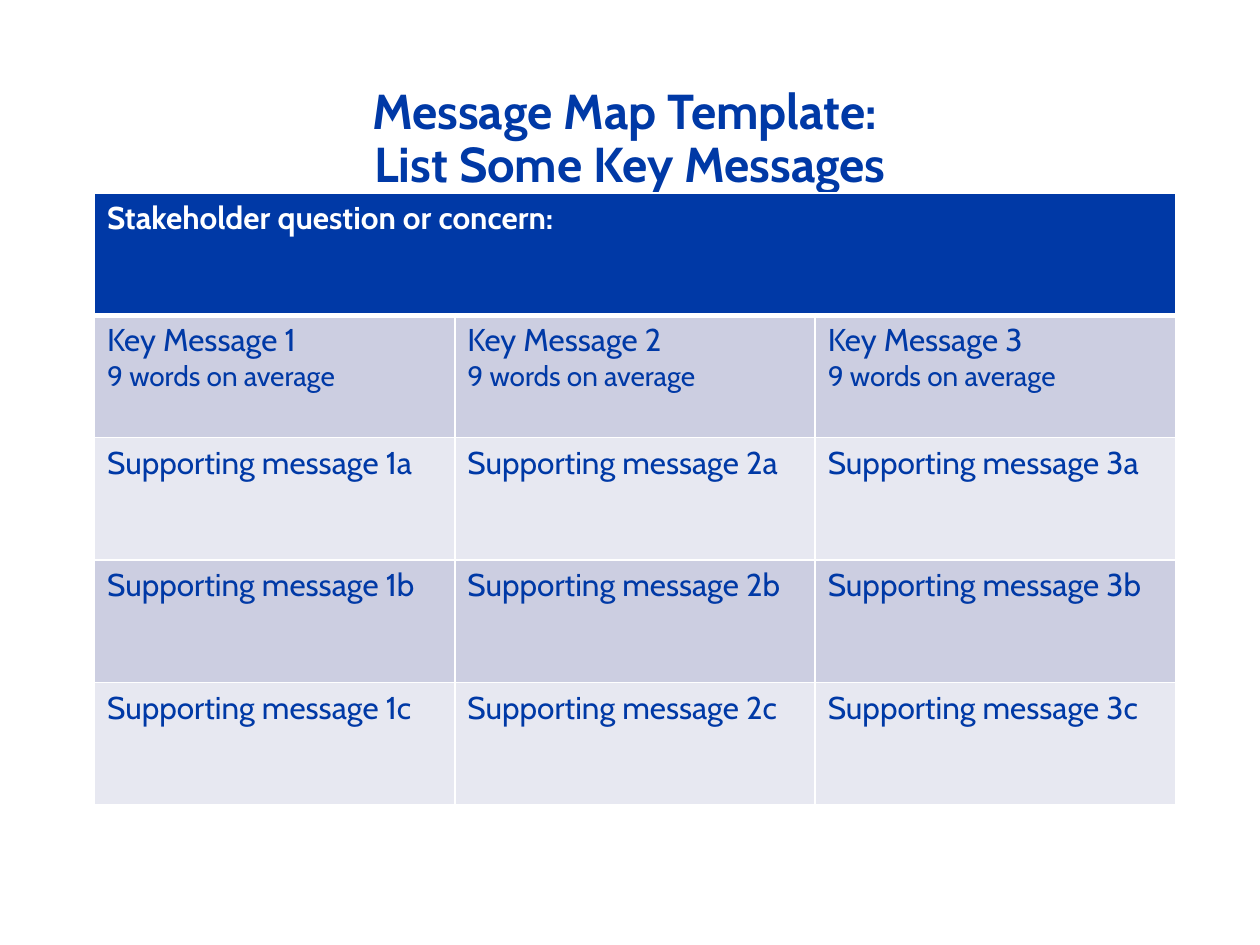
from dataclasses import dataclass

from lxml.etree import SubElement
from pptx import Presentation
from pptx.dml.color import RGBColor
from pptx.enum.text import MSO_ANCHOR, PP_ALIGN
from pptx.oxml.ns import qn
from pptx.util import Inches, Pt


@dataclass(frozen=True)
class Theme:
    font: str = "Cabin"
    blue: str = "0039A6"
    white: str = "FFFFFF"
    dark_band: str = "CCCEE1"
    light_band: str = "E7E8F1"
    title_size: int = 28
    title_leading: int = 30
    message_size: int = 18
    hint_size: int = 16
    rule: int = 1
    header_rule: int = 3


THEME = Theme()
WIDTH, HEIGHT = Inches(10), Inches(7.5)
COLUMNS, ROWS = 3, 5


def share(left, top, width, height):
    return (round(left * WIDTH), round(top * HEIGHT),
            round(width * WIDTH), round(height * HEIGHT))


def write(paragraph, text, *, size=THEME.message_size, color=THEME.blue,
          bold=False, align=PP_ALIGN.LEFT, leading=None):
    paragraph.alignment = align
    if leading:
        paragraph.line_spacing = Pt(leading)
    for number, line in enumerate(text.split("\n")):
        if number:
            paragraph.add_line_break()
        run = paragraph.add_run()
        run.text = line
        run.font.name = THEME.font
        run.font.size = Pt(size)
        run.font.bold = bold
        run.font.color.rgb = RGBColor.from_string(color)


def style_cell(cell, fill, top=THEME.rule, bottom=THEME.rule):
    properties = cell._tc.get_or_add_tcPr()
    edges = {"lnL": THEME.rule, "lnR": THEME.rule, "lnT": top, "lnB": bottom}
    for edge, weight in edges.items():
        border = SubElement(properties, qn(f"a:{edge}"), w=str(Pt(weight)))
        paint = SubElement(border, qn("a:solidFill"))
        SubElement(paint, qn("a:srgbClr"), val=THEME.white)
    cell.fill.solid()
    cell.fill.fore_color.rgb = RGBColor.from_string(fill)


def add_title(slide, box):
    frame = slide.shapes.add_textbox(*box).text_frame
    frame.word_wrap = True
    frame.vertical_anchor = MSO_ANCHOR.BOTTOM
    write(frame.paragraphs[0], "Message Map Template: \nList Some Key Messages",
          size=THEME.title_size, bold=True, align=PP_ALIGN.CENTER,
          leading=THEME.title_leading)


def add_header(message_map):
    for column in range(COLUMNS):
        style_cell(message_map.cell(0, column), THEME.blue,
                   bottom=THEME.header_rule)
    question = message_map.cell(0, 0)
    question.merge(message_map.cell(0, COLUMNS - 1))
    write(question.text_frame.paragraphs[0], "Stakeholder question or concern:",
          color=THEME.white, bold=True)


def add_message_column(message_map, column):
    number = column + 1
    key_message = message_map.cell(1, column)
    style_cell(key_message, THEME.dark_band, top=THEME.header_rule)
    write(key_message.text_frame.paragraphs[0], f"Key Message {number}")
    write(key_message.text_frame.add_paragraph(), "9 words on average",
          size=THEME.hint_size)
    for row, letter in enumerate("abc", start=2):
        support = message_map.cell(row, column)
        style_cell(support, THEME.dark_band if row % 2 else THEME.light_band)
        write(support.text_frame.paragraphs[0],
              f"Supporting message {number}{letter}")


def add_message_map(slide, box):
    message_map = slide.shapes.add_table(ROWS, COLUMNS, *box).table
    add_header(message_map)
    for column in range(COLUMNS):
        add_message_column(message_map, column)


def main():
    deck = Presentation()
    deck.slide_width, deck.slide_height = WIDTH, HEIGHT
    slide = deck.slides.add_slide(deck.slide_layouts[6])
    add_title(slide, share(0.05, 0.04, 0.9, 0.17))
    add_message_map(slide, (Inches(0.75), Inches(1.53), Inches(8.58), Inches(4.86)))
    deck.save("out.pptx")


if __name__ == "__main__":
    main()
